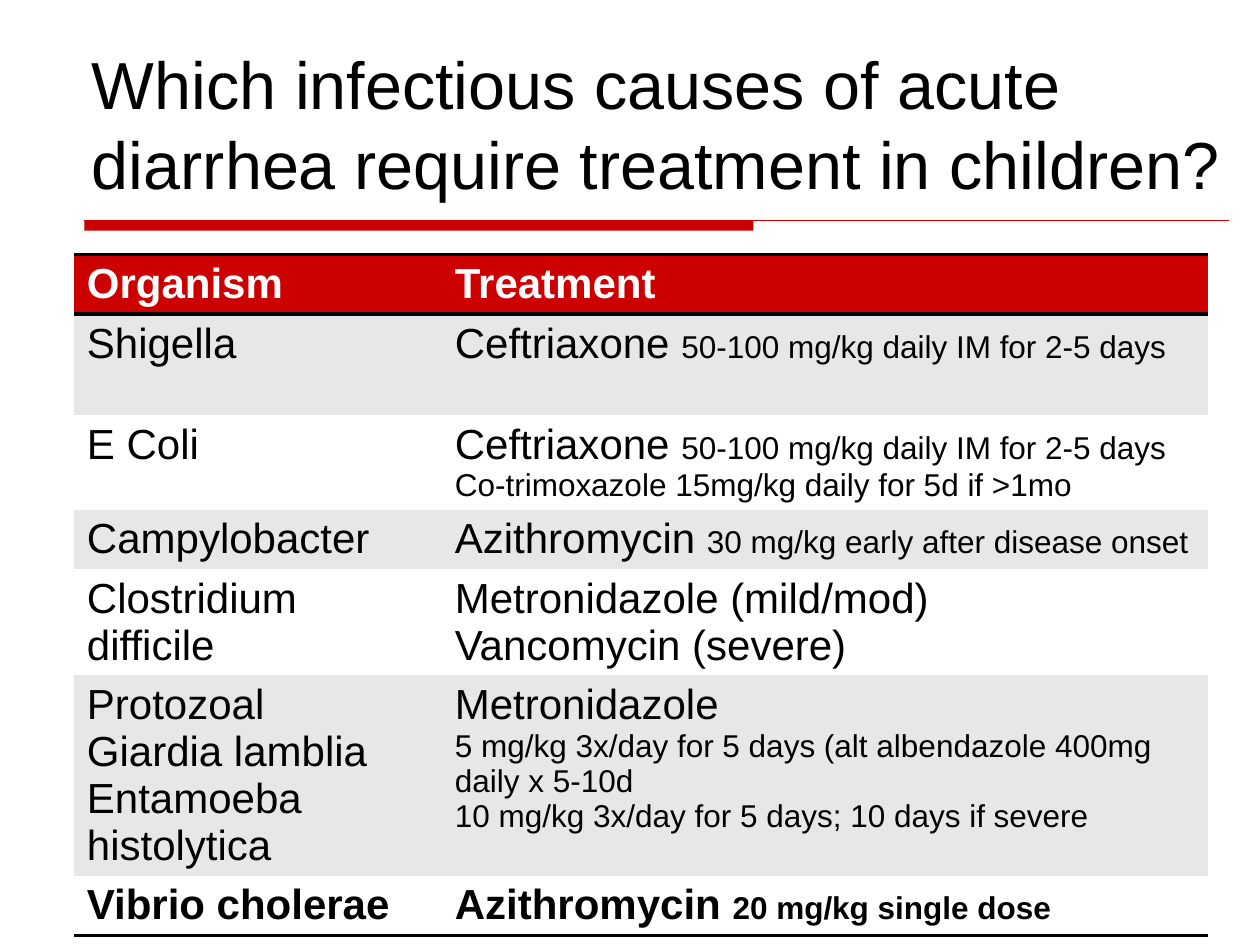
import pptx
import pptx.util
import pptx.dml.color
import pptx.enum.shapes
import pptx.enum.text
import pptx.oxml
import pptx.oxml.ns
from pptx.util import Inches

COLORS = {"black": "000000", "white": "FFFFFF", "red": "CC0000", "gray": "E7E7E7"}
FONT = "Arial"
LARGE, SMALL = 24, 18

TITLE = "Which infectious causes of acute diarrhea require treatment in children?"
CEFTRIAXONE = [("Ceftriaxone ", LARGE), ("50-100 mg/kg daily IM for 2-5 days", SMALL)]
ROWS = [
    (0.47, [[("Organism", LARGE)]], [[("Treatment", LARGE)]]),
    (0.8, [[("Shigella", LARGE)]], [CEFTRIAXONE]),
    (0.75, [[("E Coli", LARGE)]],
     [CEFTRIAXONE, [("Co-trimoxazole 15mg/kg daily for 5d if >1mo", SMALL)]]),
    (0.47, [[("Campylobacter", LARGE)]],
     [[("Azithromycin ", LARGE), ("30 mg/kg early after disease onset", SMALL)]]),
    (0.84, [[("Clostridium difficile", LARGE)]],
     [[("Metronidazole (mild/mod)", LARGE)], [("Vancomycin (severe)", LARGE)]]),
    (1.59, [[("Protozoal", LARGE)], [("Giardia lamblia", LARGE)],
            [("Entamoeba histolytica", LARGE)]],
     [[("Metronidazole", LARGE)],
      [("5 mg/kg 3x/day for 5 days (alt albendazole 400mg daily x 5-10d", SMALL)],
      [("10 mg/kg 3x/day for 5 days; 10 days if severe", SMALL)]]),
    (0.47, [[("Vibrio cholerae", LARGE)]],
     [[("Azithromycin ", LARGE), ("20 mg/kg single dose", SMALL)]]),
]
COLUMN_WIDTHS = [2.92, 6.08]
TABLE_LEFT, TABLE_TOP = 0.59, 2.02
RULE_LEFT, RULE_TOP, RULE_RIGHT = 0.67, 1.75, 9.75
BAR_WIDTH, BAR_HEIGHT = 5.31, 0.08


def color(name):
    return pptx.dml.color.RGBColor.from_string(COLORS[name])


def style_font(font, size, name):
    font.name = FONT
    font.size = pptx.util.Pt(size)
    font.color.rgb = color(name)


def add_title(page):
    title = page.shapes.title
    title.left, title.top = Inches(0.63), Inches(0.33)
    title.width, title.height = Inches(9.18), Inches(1.33)
    frame = title.text_frame
    frame.text = TITLE
    frame.word_wrap = True
    frame.auto_size = pptx.enum.text.MSO_AUTO_SIZE.NONE
    frame.vertical_anchor = pptx.enum.text.MSO_ANCHOR.BOTTOM
    para = frame.paragraphs[0]
    para.alignment = pptx.enum.text.PP_ALIGN.LEFT
    style_font(para.font, 38, "black")


def add_rule(page):
    bar = page.shapes.add_shape(
        pptx.enum.shapes.MSO_SHAPE.RECTANGLE, Inches(RULE_LEFT), Inches(RULE_TOP),
        Inches(BAR_WIDTH), Inches(BAR_HEIGHT))
    bar.shadow.inherit = False
    bar.fill.solid()
    bar.fill.fore_color.rgb = color("red")
    bar.line.fill.background()
    line = page.shapes.add_connector(
        pptx.enum.shapes.MSO_CONNECTOR.STRAIGHT, Inches(RULE_LEFT), Inches(RULE_TOP),
        Inches(RULE_RIGHT), Inches(RULE_TOP))
    line.line.color.rgb = color("red")
    line.line.width = pptx.util.Pt(0.75)
    line._element.spPr.append(pptx.oxml.parse_xml(
        f"<a:effectLst {pptx.oxml.ns.nsdecls('a')}/>"))


def set_borders(cell, drawn_sides):
    properties = cell._tc.get_or_add_tcPr()
    for position, side in enumerate("LRTB"):
        if side in drawn_sides:
            paint = f'<a:solidFill><a:srgbClr val="{COLORS["black"]}"/></a:solidFill>'
        else:
            paint = "<a:noFill/>"
        properties.insert(position, pptx.oxml.parse_xml(
            f'<a:ln{side} {pptx.oxml.ns.nsdecls("a")} w="{pptx.util.Pt(2)}">'
            f"{paint}</a:ln{side}>"))


def fill_cell(cell, lines, fill, text_color, bold, sides):
    cell.fill.solid()
    cell.fill.fore_color.rgb = color(fill)
    set_borders(cell, sides)
    frame = cell.text_frame
    for index, parts in enumerate(lines):
        para = frame.paragraphs[0] if index == 0 else frame.add_paragraph()
        for text, size in parts:
            span = para.add_run()
            span.text = text
            style_font(span.font, size, text_color)
            span.font.bold = bold


def add_treatments(page):
    heights = [row[0] for row in ROWS]
    table = page.shapes.add_table(
        len(ROWS), len(COLUMN_WIDTHS), Inches(TABLE_LEFT), Inches(TABLE_TOP),
        Inches(sum(COLUMN_WIDTHS)), Inches(sum(heights))).table
    for column, width in zip(table.columns, COLUMN_WIDTHS):
        column.width = Inches(width)
    last = len(ROWS) - 1
    table.last_row = True
    for index, (height, *cells) in enumerate(ROWS):
        table.rows[index].height = Inches(height)
        fill = "red" if index == 0 else "gray" if index % 2 else "white"
        text_color = "white" if index == 0 else "black"
        sides = {0: "TB", 1: "T", last: "B"}.get(index, "")
        for column, lines in enumerate(cells):
            fill_cell(table.cell(index, column), lines, fill, text_color,
                      index in (0, last), sides)


def main():
    deck = pptx.Presentation()
    deck.slide_width, deck.slide_height = Inches(10), Inches(7.5)
    page = deck.slides.add_slide(deck.slide_layouts[5])
    add_rule(page)
    add_title(page)
    add_treatments(page)
    deck.save("out.pptx")


if __name__ == "__main__":
    main()
